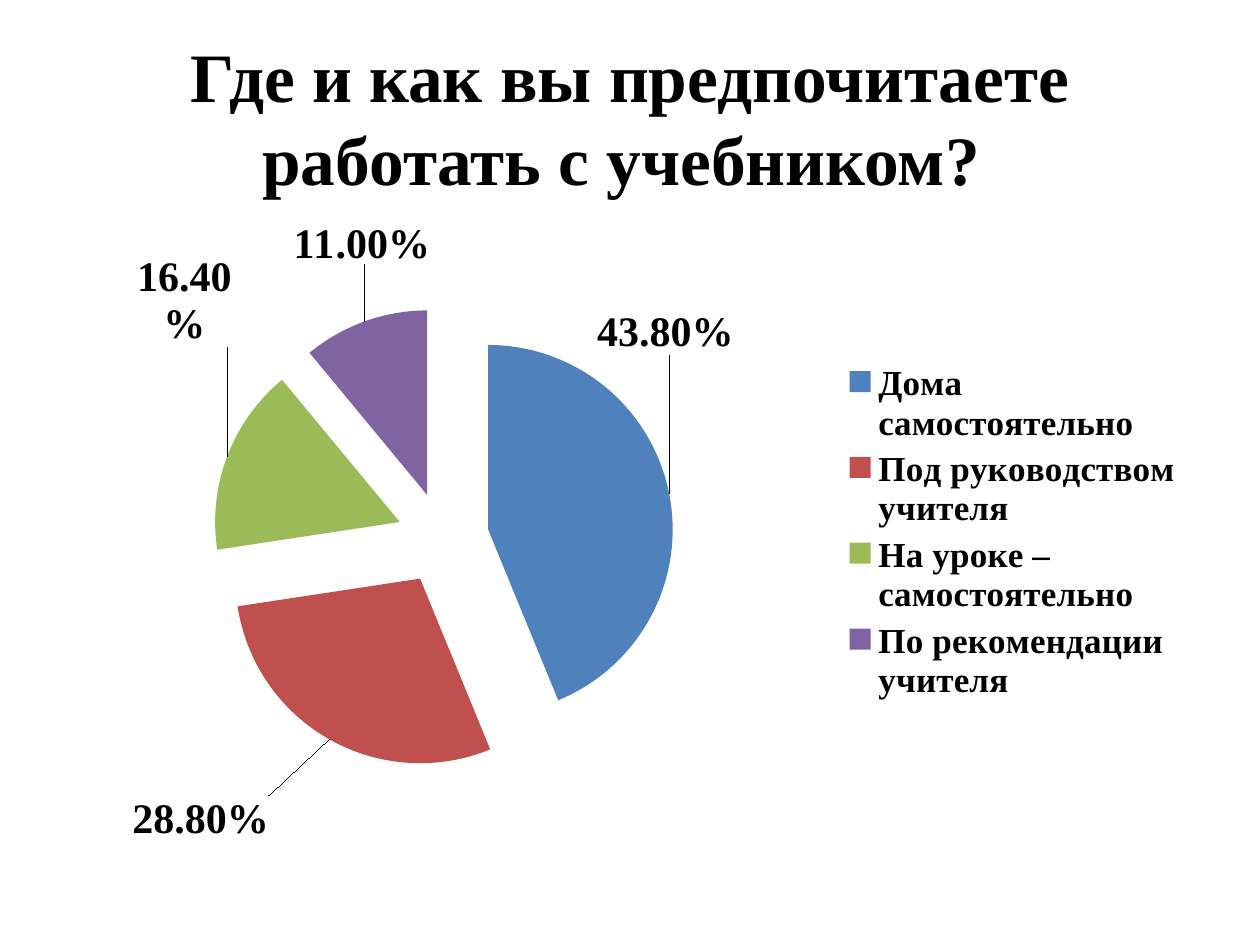
from lxml.etree import SubElement as Sub
from pptx import Presentation
from pptx.chart.data import CategoryChartData as Data
from pptx.dml.color import RGBColor as Rgb
from pptx.enum.chart import XL_CHART_TYPE as Kind, XL_LABEL_POSITION as Spot
from pptx.enum.chart import XL_LEGEND_POSITION as Side
from pptx.enum.text import MSO_ANCHOR as Anchor, PP_ALIGN as Align
from pptx.oxml.ns import qn
from pptx.util import Pt

TITLE = "Где и как вы предпочитаете работать с учебником? "
# answer, share, slice colour, shift of the label from its usual place
SLICES = [
    ("Дома самостоятельно", 0.438, "4F81BD", (-0.07, -0.22)),
    ("Под руководством учителя", 0.288, "C0504D", (-0.05, 0.08)),
    ("На уроке – самостоятельно", 0.164, "9BBB59", (0.01, -0.17)),
    ("По рекомендации учителя", 0.11, "8064A2", (0.06, -0.08)),
]
BOLD = {"name": "Times New Roman", "bold": True}


def color(code):
    return Rgb.from_string(code)


def style(font, **form):
    for key, value in {**BOLD, **form}.items():
        setattr(font, key, value)
    font.color.rgb = color("000000")


def layout(**form):
    """Make a manual chart layout from its values."""
    top = Sub(Sub(Sub(Sub(Sub(Sub(
        Presentation().slides._sldIdLst, qn("c:chart")), qn("c:plotArea")),
        qn("c:x")), qn("c:y")), qn("c:w")), qn("c:layout"))
    inner = Sub(top, qn("c:manualLayout"))
    for key, value in form.items():
        Sub(inner, qn("c:" + key)).set("val", str(value))
    return top


def add_title(slide):
    box = slide.shapes.add_textbox(Pt(36), Pt(21.6), Pt(648), Pt(90))
    frame = box.text_frame
    frame.word_wrap = True
    frame.vertical_anchor = Anchor.MIDDLE
    para = frame.paragraphs[0]
    para.alignment = Align.CENTER
    run = para.add_run()
    run.text = TITLE
    style(run.font, size=Pt(39.6))


def add_pie(slide):
    data = Data(number_format="0.00%")
    data.categories = [name for name, *_ in SLICES]
    data.add_series("Series 1", [share for _, share, *_ in SLICES])
    chart = slide.shapes.add_chart(
        Kind.PIE, Pt(36), Pt(126), Pt(648), Pt(356.4), data).chart
    chart.has_title = False
    chart.font.name, chart.font.size = "Calibri", Pt(10)
    chart.has_legend = True
    chart.legend.position = Side.RIGHT
    chart.legend.include_in_layout = False
    style(chart.legend.font, size=Pt(20))
    plot = chart.plots[0]
    plot.vary_by_categories = True
    paint(plot.series[0])
    area = chart._chartSpace.find(".//" + qn("c:plotArea"))
    for old in area.findall(qn("c:layout")):
        area.remove(old)
    area.insert(0, layout(layoutTarget="inner", xMode="edge", yMode="edge",
                          x=0.13, y=0.14, w=0.41, h=0.74))


def paint(series):
    """Colour and pull out the slices, and place their labels."""
    labels = series.data_labels
    labels.show_value = True
    labels.number_format = "0.00%"
    labels.number_format_is_linked = False
    style(labels.font, size=Pt(24))
    for num, (_, _, code, _) in enumerate(SLICES):
        point = series.points[num]
        point.format.fill.solid()
        point.format.fill.fore_color.rgb = color(code)
        style(point.data_label.font, size=Pt(24))
        point.data_label.position = Spot.OUTSIDE_END
    root = series._element
    for label, (*_, (x, y)) in zip(root.iter(qn("c:dLbl")), SLICES):
        label.insert(1, layout(x=x, y=y))
    burst = Sub(root, qn("c:explosion"))
    burst.set("val", "25")
    root.find(qn("c:dPt")).addprevious(burst)


def main():
    deck = Presentation()
    deck.slide_width, deck.slide_height = Pt(720), Pt(540)
    slide = deck.slides.add_slide(deck.slide_layouts[6])
    add_title(slide)
    add_pie(slide)
    deck.save("out.pptx")


if __name__ == "__main__":
    main()
